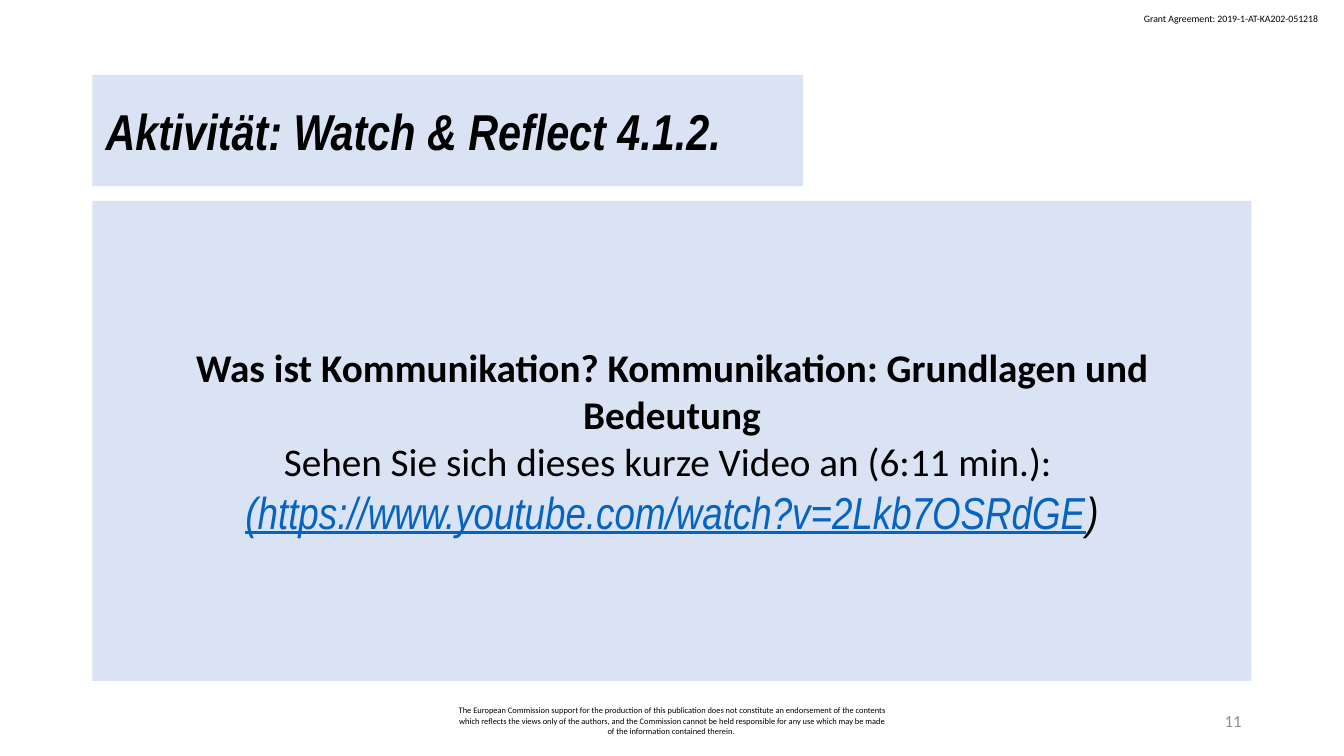
from pptx import Presentation
from pptx.dml.color import RGBColor
from pptx.enum.shapes import MSO_SHAPE
from pptx.enum.text import MSO_ANCHOR, PP_ALIGN
from pptx.util import Cm, Pt

LEFT = 2.33
FOOTER_TOP, FOOTER_HEIGHT = 17.65, 1.02


def color(hex_code):
    return RGBColor.from_string(hex_code)


class SlideBuilder:
    BODY_FONT = "Calibri"
    ACCENT_FONT = "Arial Narrow"
    BLACK, GREY, LINK, PANEL = "000000", "8C8C8C", "0563C1", "DAE3F3"

    def __init__(self, prs):
        self.s = prs.slides.add_slide(prs.slide_layouts[6])

    def run(self, p, text, size, font=BODY_FONT, hex_code=BLACK,
            bold=False, italic=False, underline=False):
        r = p.add_run()
        r.text = text
        r.font.name = font
        r.font.size = Pt(size)
        r.font.bold = bold
        r.font.italic = italic
        r.font.underline = underline
        r.font.color.rgb = color(hex_code)

    def label(self, box, text, size, align=PP_ALIGN.LEFT,
              anchor=MSO_ANCHOR.MIDDLE, wrap=True, hex_code=BLACK):
        tf = self.s.shapes.add_textbox(*map(Cm, box)).text_frame
        tf.word_wrap = wrap
        tf.vertical_anchor = anchor
        p = tf.paragraphs[0]
        p.alignment = align
        self.run(p, text, size, hex_code=hex_code)

    def panel(self, box, paragraphs, align):
        """Filled rectangle; each paragraph is a list of run settings."""
        sp = self.s.shapes.add_shape(MSO_SHAPE.RECTANGLE, *map(Cm, box))
        sp.shadow.inherit = False
        sp.fill.solid()
        sp.fill.fore_color.rgb = color(self.PANEL)
        sp.line.fill.background()
        tf = sp.text_frame
        tf.word_wrap = True
        tf.vertical_anchor = MSO_ANCHOR.MIDDLE
        tf.margin_left = tf.margin_right = Cm(0.33)
        tf.margin_top = tf.margin_bottom = Cm(0.17)
        for i, runs in enumerate(paragraphs):
            p = tf.add_paragraph() if i else tf.paragraphs[0]
            p.alignment = align
            for settings in runs:
                self.run(p, **settings)


def main():
    prs = Presentation()
    prs.slide_width, prs.slide_height = Cm(33.87), Cm(19.05)
    b = SlideBuilder(prs)

    b.label((28.58, 0.2, 5, 0.56), "Grant Agreement: 2019-1-AT-KA202-051218",
            7, anchor=MSO_ANCHOR.TOP, wrap=False)
    b.label((11.22, FOOTER_TOP, 11.43, FOOTER_HEIGHT),
            "The European Commission support for the production of this "
            "publication does not constitute an endorsement of the contents "
            "which reflects the views only of the authors, and the Commission "
            "cannot be held responsible for any use which may be made of the "
            "information contained therein. ", 6, PP_ALIGN.CENTER)
    b.label((23.92, FOOTER_TOP, 7.62, FOOTER_HEIGHT), "11", 12,
            PP_ALIGN.RIGHT, hex_code=b.GREY)

    accent = dict(font=b.ACCENT_FONT, italic=True)
    b.panel((LEFT, 1.89, 17.91, 2.8),
            [[dict(text="Aktivität: Watch & Reflect 4.1.2.", size=36,
                   bold=True, **accent)]], PP_ALIGN.LEFT)
    b.panel((LEFT, 5.06, 29.21, 12.1), [
        [dict(text="Was ist Kommunikation? Kommunikation: Grundlagen und "
                   "Bedeutung", size=28, bold=True)],
        [dict(text="Sehen Sie sich dieses kurze Video an (6:11 min.): ",
              size=28)],
        [dict(text="(https://www.youtube.com/watch?v=2Lkb7OSRdGE", size=32,
              hex_code=b.LINK, underline=True, **accent),
         dict(text=")", size=32, **accent)],
    ], PP_ALIGN.CENTER)

    prs.save("out.pptx")


if __name__ == "__main__":
    main()
